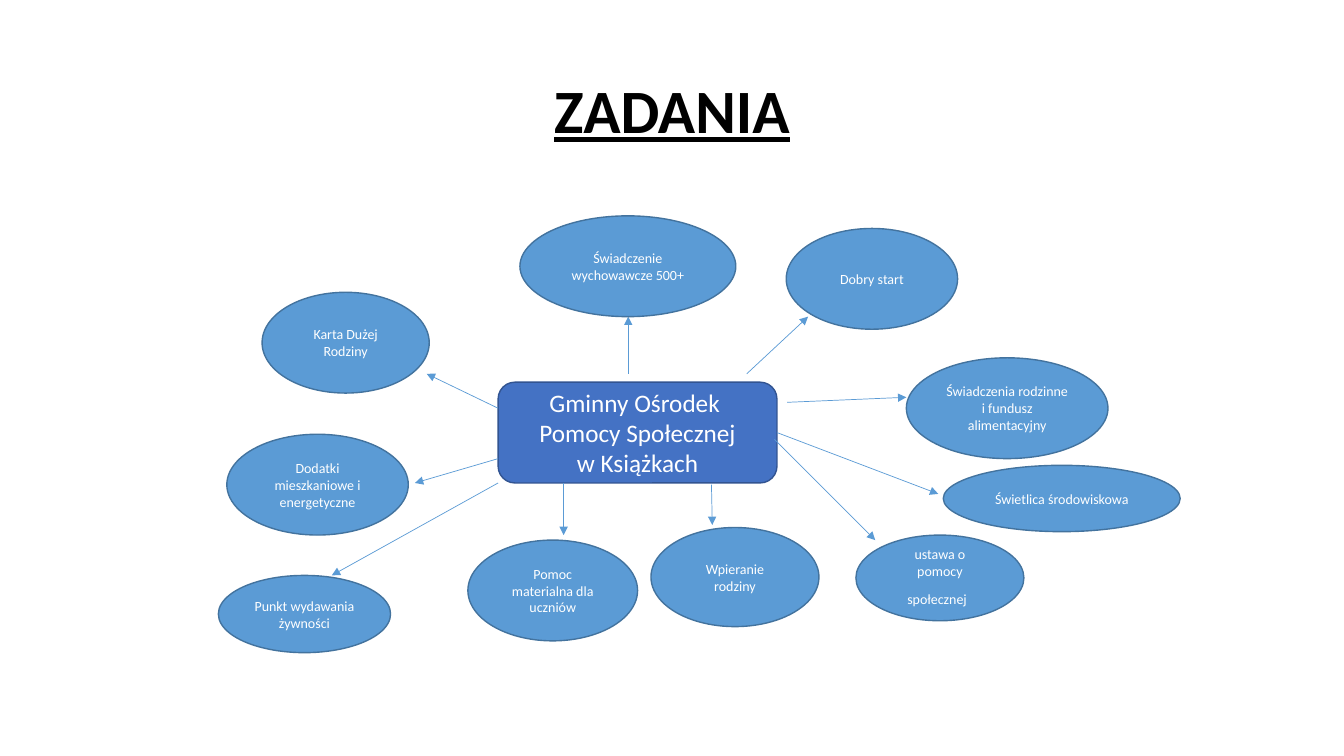
import pptx
import pptx.util
import pptx.dml.color
import pptx.enum.shapes
import pptx.enum.text
import pptx.oxml.ns
import lxml.etree

WIDE, HIGH = pptx.util.Inches(13.33), pptx.util.Inches(7.5)
COL, ROW = WIDE / 160, HIGH / 90
HUES = {"ink": "000000", "text": "FFFFFF", "hub": "4472C4", "rim": "325491",
        "oval": "5B9BD5", "edge": "43739E"}
FORMS = pptx.enum.shapes.MSO_SHAPE

HEAD = (11, 4.8, 138, 17.4)
MAP = (20, 20, 130, 60)
HUB = (39.3, 25.5, 33.2, 12)
SPOKES = [
    ([("ustawa o pomocy społecznej", 10), (" ", 18)],
     (81.9, 43.7, 20, 10.2), (72.2, 32.3, 84.2, 44.3)),
    ([("Świadczenia rodzinne i fundusz alimentacyjny", 10)],
     (87.9, 22.6, 24, 12), (73.7, 27.9, 87.9, 27.3)),
    ([("Świadczenie wychowawcze 500+", 10)],
     (41.9, 5.7, 25.7, 12), (54.8, 24.5, 54.8, 17.7)),
    ([("Dobry start", 10)],
     (73.6, 7.2, 20.4, 12), (68.9, 24.5, 76.2, 17.7)),
    ([("Karta Dużej Rodziny", 10)],
     (11.2, 14.8, 19.9, 12), (39.3, 28.6, 30.8, 24.5)),
    ([("Dodatki mieszkaniowe i energetyczne", 10)],
     (7, 31.7, 21.6, 12), (39.3, 34.6, 29.4, 37.5)),
    ([("Pomoc materialna dla uczniów", 10)],
     (35.7, 44.3, 20.2, 12), (47.1, 37.5, 47.1, 43.7)),
    ([("Wpieranie rodziny", 10)],
     (57.5, 42.8, 20, 11.8), (64.7, 37.7, 64.8, 42.5)),
    ([("Punkt wydawania żywności", 10)],
     (6, 48.5, 20.5, 9.2), (39.3, 37.5, 19.5, 48.5)),
    ([("Świetlica środowiskowa", 10)],
     (92.3, 35.4, 28.2, 7.9), (72.5, 31.5, 91.7, 38.8)),
]


def hue(name):
    return pptx.dml.color.RGBColor.from_string(HUES[name])


def spot(x, y):
    return round(x * COL), round(y * ROW)


def write(shape, lines, tint):
    frame = shape.text_frame
    frame.word_wrap = True
    frame.vertical_anchor = pptx.enum.text.MSO_ANCHOR.MIDDLE
    for i, line in enumerate(lines):
        para = frame.add_paragraph() if i else frame.paragraphs[0]
        para.alignment = pptx.enum.text.PP_ALIGN.CENTER
        for text, size in line:
            run = para.add_run()
            run.text = text
            run.font.name = "Calibri"
            run.font.size = pptx.util.Pt(size)
            run.font.color.rgb = hue(tint)
    return frame.paragraphs[0]


def node(slide, form, box, fill, edge, lines):
    x, y, w, h = box
    shape = slide.shapes.add_shape(form, *spot(x, y), *spot(w, h))
    shape.shadow.inherit = False
    shape.fill.solid()
    shape.fill.fore_color.rgb = hue(fill)
    shape.line.color.rgb = hue(edge)
    shape.line.width = pptx.util.Pt(1)
    write(shape, lines, "text")


def arrow(slide, x1, y1, x2, y2):
    line = slide.shapes.add_connector(
        pptx.enum.shapes.MSO_CONNECTOR.STRAIGHT, *spot(x1, y1), *spot(x2, y2))
    line.line.color.rgb = hue("oval")
    line.line.width = pptx.util.Pt(0.5)
    props = line._element.spPr
    tail = lxml.etree.SubElement(line.line._get_or_add_ln(),
                                 pptx.oxml.ns.qn("a:tailEnd"))
    tail.set("type", "triangle")
    lxml.etree.SubElement(props, pptx.oxml.ns.qn("a:effectLst"))


def title(slide, box):
    x, y, w, h = box
    shape = slide.shapes.add_textbox(*spot(x, y), *spot(w, h))
    para = write(shape, [[("ZADANIA", 44)]], "ink")
    para.line_spacing = 0.9
    para.runs[0].font.bold = True
    para.runs[0].font.underline = True


def tasks(slide, box):
    left, top = box[:2]

    def shift(x, y, *rest):
        return left + x, top + y, *rest

    node(slide, FORMS.ROUNDED_RECTANGLE, shift(*HUB), "hub", "rim",
         [[("Gminny Ośrodek ", 18)], [("Pomocy Społecznej", 18)],
          [("w Książkach", 18)]])
    for runs, oval, (x1, y1, x2, y2) in SPOKES:
        arrow(slide, *shift(x1, y1), *shift(x2, y2))
        node(slide, FORMS.OVAL, shift(*oval), "oval", "edge", [runs])


def main():
    deck = pptx.Presentation()
    deck.slide_width, deck.slide_height = WIDE, HIGH
    slide = deck.slides.add_slide(deck.slide_layouts[6])
    title(slide, HEAD)
    tasks(slide, MAP)
    deck.save("out.pptx")


if __name__ == "__main__":
    main()
